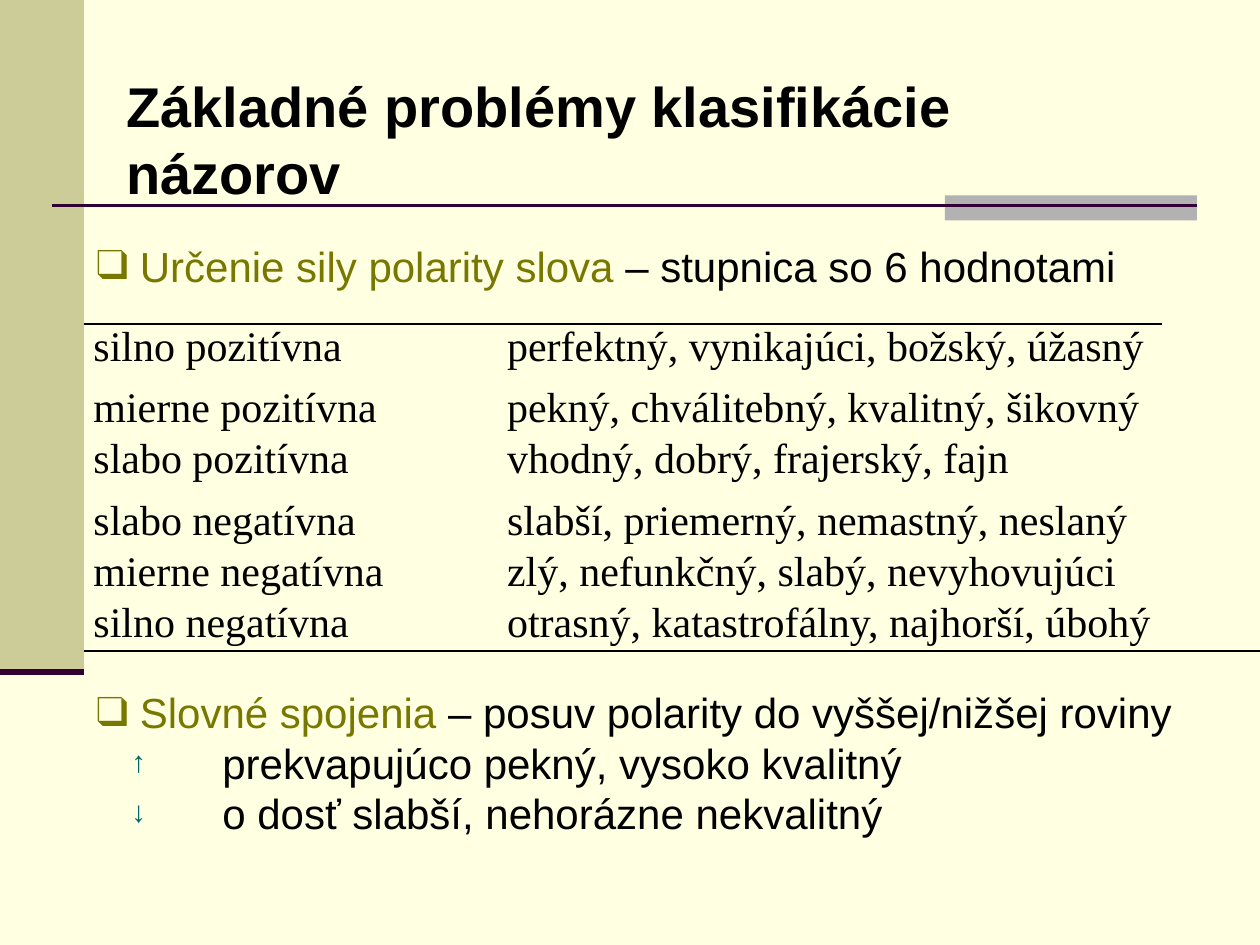
import pptx
import pptx.util
import pptx.dml.color
import pptx.enum.shapes
import pptx.oxml
import pptx.oxml.ns
from lxml import etree

Pt = pptx.util.Pt
RGB = pptx.dml.color.RGBColor
qn = pptx.oxml.ns.qn

CREAM = RGB(0xFF, 0xFF, 0xE1)
KHAKI = RGB(0xCC, 0xCC, 0x99)
GREY = RGB(0xB2, 0xB2, 0xB2)
PLUM = RGB(0x33, 0x00, 0x33)
OLIVE = RGB(0x78, 0x78, 0x00)
TEAL = RGB(0x00, 0x66, 0x66)
BLACK = RGB(0, 0, 0)

SANS, SERIF = "Arial", "Times New Roman"
PLAIN = "{2D5ABB26-0587-4C30-8999-92F81FD0307C}"
# each row: label, words, last column that the words span
ROWS = [
    ("silno pozitívna", "perfektný, vynikajúci, božský, úžasný", 1),
    ("mierne pozitívna", "pekný, chválitebný, kvalitný, šikovný", 3),
    ("slabo pozitívna", "vhodný, dobrý, frajerský, fajn", 2),
    ("slabo negatívna", "slabší, priemerný, nemastný, neslaný", 3),
    ("mierne negatívna", "zlý, nefunkčný, slabý, nevyhovujúci", 3),
    ("silno negatívna", "otrasný, katastrofálny, najhorší, úbohý", 3),
]
WIDTHS = [236.4, 379.6, 28, 28]
TALL, LOW = 35.2, 29.2
TALLS = (0, 2)


def add_bar(slide, box, color):
    bar = slide.shapes.add_shape(
        pptx.enum.shapes.MSO_SHAPE.RECTANGLE, *map(Pt, box))
    bar.shadow.inherit = False
    bar.fill.solid()
    bar.fill.fore_color.rgb = color
    bar.line.fill.background()


def add_rule(slide, left, right, y, width):
    rule = slide.shapes.add_connector(
        pptx.enum.shapes.MSO_CONNECTOR.STRAIGHT,
        Pt(left), Pt(y), Pt(right), Pt(y))
    rule.line.color.rgb = PLUM
    rule.line.width = Pt(width)
    etree.SubElement(rule._element.spPr, qn("a:effectLst"))


def add_run(para, text, color=BLACK, size=24, font=SANS, bold=False):
    run = para.add_run()
    run.text = text
    run.font.size = Pt(size)
    run.font.name = font
    run.font.bold = bold
    run.font.color.rgb = color


def add_box(slide, box):
    frame = slide.shapes.add_textbox(*map(Pt, box)).text_frame
    frame.word_wrap = True
    return frame


def set_mark(para, char, color, margin=0, indent=0, scale=100):
    """Give the paragraph a bullet, with its indents and size in percent."""
    props = para._p.get_or_add_pPr()
    props.set("marL", str(Pt(margin)))
    props.set("indent", str(Pt(indent)))
    tint = etree.SubElement(props, qn("a:buClr"))
    etree.SubElement(tint, qn("a:srgbClr"), val=str(color))
    etree.SubElement(props, qn("a:buSzPct"), val=str(scale * 1000))
    etree.SubElement(props, qn("a:buFont"), typeface=SERIF)
    etree.SubElement(props, qn("a:buChar"), char=char)


def add_frame(slide, box):
    """Side band, title rule and grey accent."""
    left, top, width, height = box
    add_bar(slide, (left, top, 48, 384), KHAKI)
    add_bar(slide, (left + width - 180, top + 111.6, 144, 14.4), GREY)
    add_rule(slide, left + 30, left + width - 36, top + 117.4, 1.5)
    add_rule(slide, left, left + 48, top + 384, 3.5)


def add_title(slide, box):
    para = add_box(slide, box).paragraphs[0]
    add_run(para, "Základné problémy klasifikácie názorov", size=32, bold=True)


def add_point(para, head, rest):
    set_mark(para, "❑", OLIVE)
    add_run(para, f" {head} ", OLIVE)
    add_run(para, rest)


def add_scale(slide, box):
    frame = add_box(slide, box)
    add_point(frame.paragraphs[0], "Určenie sily polarity slova",
              "– stupnica so 6 hodnotami")


def add_shifts(slide, box):
    frame = add_box(slide, box)
    add_point(frame.paragraphs[0], "Slovné spojenia",
              "– posuv polarity do vyššej/nižšej roviny")
    for arrow, text in (("↑", "prekvapujúco pekný, vysoko kvalitný"),
                        ("↓", "o dosť slabší, nehorázne nekvalitný")):
        para = frame.add_paragraph()
        para.level = 1
        set_mark(para, arrow, TEAL, 36, -16, 70)
        add_run(para, "\t" + text)


def add_edge(cell, side):
    """Draw the top (lnT) or bottom (lnB) border of a cell."""
    edge = pptx.oxml.parse_xml(
        f'<a:{side} xmlns:a="http://schemas.openxmlformats.org/drawingml/2006/main"'
        f' w="{Pt(1.5)}"><a:solidFill><a:srgbClr val="{BLACK}"/></a:solidFill>'
        f'</a:{side}>')
    cell._tc.get_or_add_tcPr().insert(0, edge)


def add_words(slide, box):
    table = slide.shapes.add_table(
        len(ROWS), len(WIDTHS), *map(Pt, box)).table
    table._tbl.tblPr.find(qn("a:tableStyleId")).text = PLAIN
    table.first_row = table.horz_banding = False
    for col, width in zip(table.columns, WIDTHS):
        col.width = Pt(width)
    for r, (label, words, last) in enumerate(ROWS):
        table.rows[r].height = Pt(TALL if r in TALLS else LOW)
        for cell in table.rows[r].cells:
            cell.fill.background()
            cell.margin_left = cell.margin_right = Pt(5.4)
            cell.margin_top = cell.margin_bottom = 0
            cell.text_frame.paragraphs[0].font.size = Pt(12)
        for c, text in enumerate((label, words)):
            para = table.cell(r, c).text_frame.paragraphs[0]
            add_run(para, text, font=SERIF)
        if last > 1:
            table.cell(r, 1).merge(table.cell(r, last))
    for c in range(2):
        add_edge(table.cell(0, c), "lnT")
    for c in range(len(WIDTHS)):
        add_edge(table.cell(len(ROWS) - 1, c), "lnB")


def main():
    deck = pptx.Presentation()
    deck.slide_width, deck.slide_height = Pt(720), Pt(540)
    slide = deck.slides.add_slide(deck.slide_layouts[6])
    slide.background.fill.solid()
    slide.background.fill.fore_color.rgb = CREAM
    add_frame(slide, (0, 0, 720, 540))
    add_title(slide, (65, 37.4, 612, 84.2))
    add_scale(slide, (48, 134, 629, 36))
    add_words(slide, (48, 185, 672, 187.2))
    add_shifts(slide, (48, 389, 658, 94.3))
    deck.save("out.pptx")


if __name__ == "__main__":
    main()
